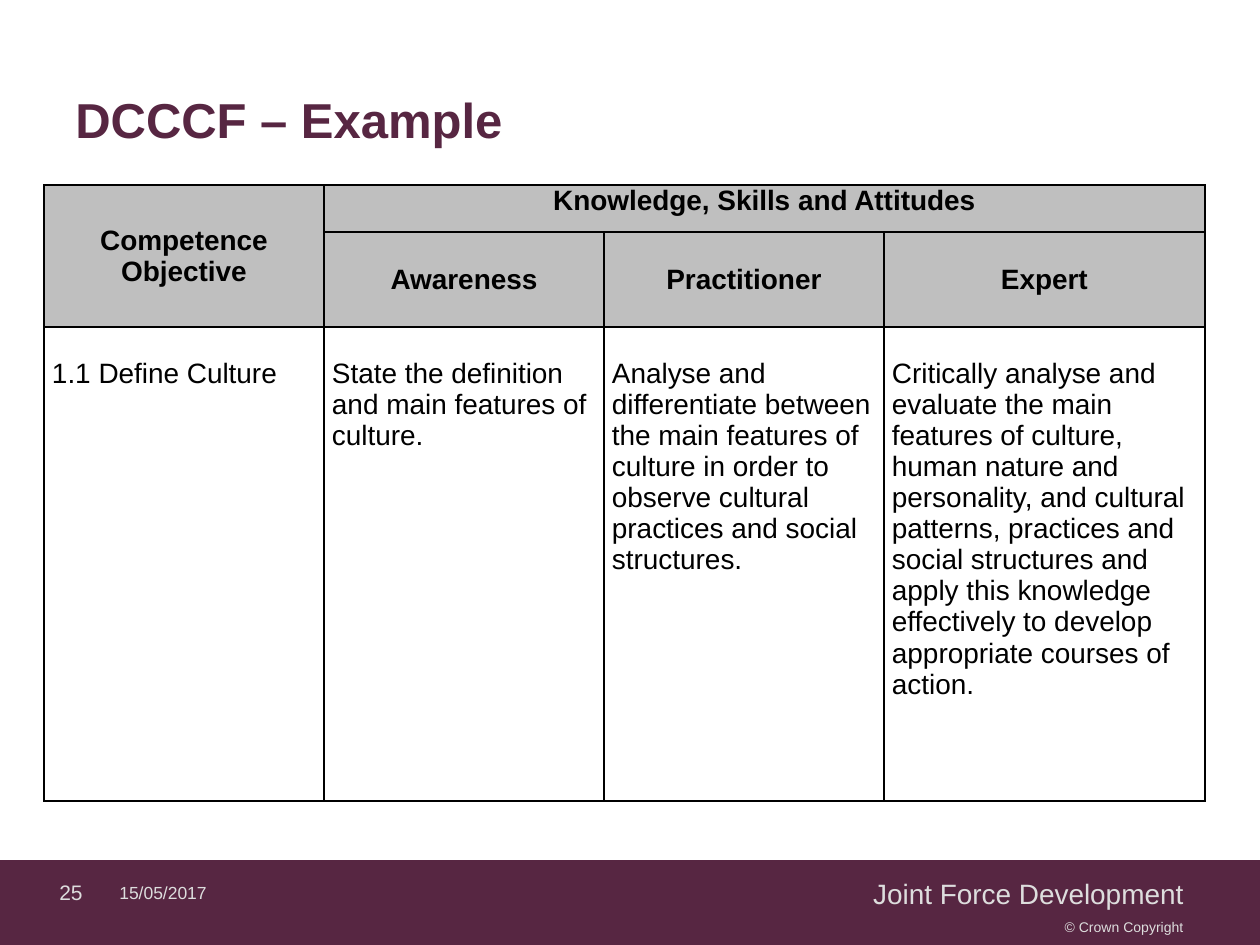
from lxml import etree
from pptx import Presentation
from pptx.dml.color import RGBColor
from pptx.enum.shapes import MSO_SHAPE
from pptx.enum.text import MSO_ANCHOR, PP_ALIGN
from pptx.oxml.ns import qn
from pptx.util import Pt

RECT = MSO_SHAPE.RECTANGLE
TOP, MIDDLE = MSO_ANCHOR.TOP, MSO_ANCHOR.MIDDLE
LEFT, CENTER, RIGHT = PP_ALIGN.LEFT, PP_ALIGN.CENTER, PP_ALIGN.RIGHT

THEME = {
    "font": "Arial", "plum": "572642", "pale": "DDDDDD", "header": "BFBFBF",
    "ink": "000000", "paper": "FFFFFF",
    "title": 28, "table": 16, "unit": 16, "number": 12, "date": 10, "credit": 8,
}
TITLE = "DCCCF – Example"
OBJECTIVE = "Competence Objective"
GROUP = "Knowledge, Skills and Attitudes"
LEVELS = ["Awareness", "Practitioner", "Expert"]
BODY = [
    "1.1 Define Culture",
    "State the definition and main features of culture.",
    "Analyse and differentiate between the main features of culture in order to "
    "observe cultural practices and social structures.",
    "Critically analyse and evaluate the main features of culture, human nature and "
    "personality, and cultural patterns, practices and social structures and apply "
    "this knowledge effectively to develop appropriate courses of action.",
]
FOOTER = [
    ("25", "number", 0, 95, 892),
    ("15/05/2017", "date", 95, 124, 892),
    ("Joint Force Development", "unit", 446, 750, 893),
    ("© Crown Copyright", "credit", 446, 750, 927),
]
SLIDE_W, SLIDE_H = 1260, 945
BAND_TOP, FOOTER_H = 860, 34
TABLE_X, TABLE_Y = 44, 185
COLS, ROWS = [280, 280, 280, 321], [47, 95, 474]
CELL_PAD, BODY_TOP = 8, 31


def px(n):
    return round(n * 914400 / 126)


def rgb(name):
    return RGBColor.from_string(THEME[name])


def write(tf, text, size, color, align, bold=False):
    p = tf.paragraphs[0]
    p.alignment = align
    r = p.add_run()
    r.text = text
    r.font.name = THEME["font"]
    r.font.size = Pt(THEME[size])
    r.font.bold = bold
    r.font.color.rgb = rgb(color)


def add_text(s, box, text, size, color, align, bold=False):
    tf = s.shapes.add_textbox(*map(px, box)).text_frame
    tf.word_wrap = True
    tf.vertical_anchor = MIDDLE
    tf.margin_top = tf.margin_bottom = 0
    write(tf, text, size, color, align, bold)


def style_cell(cell, fill):
    cell.fill.solid()
    cell.fill.fore_color.rgb = rgb(fill)
    cell.margin_left = cell.margin_right = px(CELL_PAD)
    cell.margin_top = cell.margin_bottom = 0
    tc_pr = cell._tc.get_or_add_tcPr()
    for i, side in enumerate(("lnL", "lnR", "lnT", "lnB")):
        ln = etree.Element(qn(f"a:{side}"), w=str(Pt(1)))
        solid = etree.SubElement(ln, qn("a:solidFill"))
        etree.SubElement(solid, qn("a:srgbClr"), val=THEME["ink"])
        tc_pr.insert(i, ln)


def fill_cell(cell, text, align, anchor, bold):
    cell.vertical_anchor = anchor
    write(cell.text_frame, text, "table", "ink", align, bold)


def add_competence_table(s):
    frame = s.shapes.add_table(len(ROWS), len(COLS), px(TABLE_X), px(TABLE_Y),
                               px(sum(COLS)), px(sum(ROWS)))
    table = frame.table
    for col, width in zip(table.columns, COLS):
        col.width = px(width)
    for row, height in zip(table.rows, ROWS):
        row.height = px(height)
    for y in range(len(ROWS)):
        for x in range(len(COLS)):
            style_cell(table.cell(y, x), "header" if y < 2 else "paper")
    table.cell(0, 0).merge(table.cell(1, 0))
    table.cell(0, 1).merge(table.cell(0, 3))
    fill_cell(table.cell(0, 0), OBJECTIVE, CENTER, MIDDLE, True)
    fill_cell(table.cell(0, 1), GROUP, CENTER, TOP, True)
    for x, level in enumerate(LEVELS, 1):
        fill_cell(table.cell(1, x), level, CENTER, MIDDLE, True)
    for x, text in enumerate(BODY):
        cell = table.cell(2, x)
        cell.margin_top = px(BODY_TOP)
        fill_cell(cell, text, LEFT, TOP, False)


def main():
    prs = Presentation()
    prs.slide_width, prs.slide_height = px(SLIDE_W), px(SLIDE_H)
    s = prs.slides.add_slide(prs.slide_layouts[6])
    band = s.shapes.add_shape(RECT, 0, px(BAND_TOP), px(SLIDE_W), px(SLIDE_H - BAND_TOP))
    band.shadow.inherit = False
    band.fill.solid()
    band.fill.fore_color.rgb = rgb("plum")
    band.line.fill.background()
    for text, size, x, w, mid in FOOTER:
        add_text(s, (x, mid - FOOTER_H / 2, w, FOOTER_H), text, size, "pale", RIGHT)
    add_text(s, (63, 40, 1134, 158), TITLE, "title", "plum", LEFT, True)
    add_competence_table(s)
    prs.save("out.pptx")


if __name__ == "__main__":
    main()
